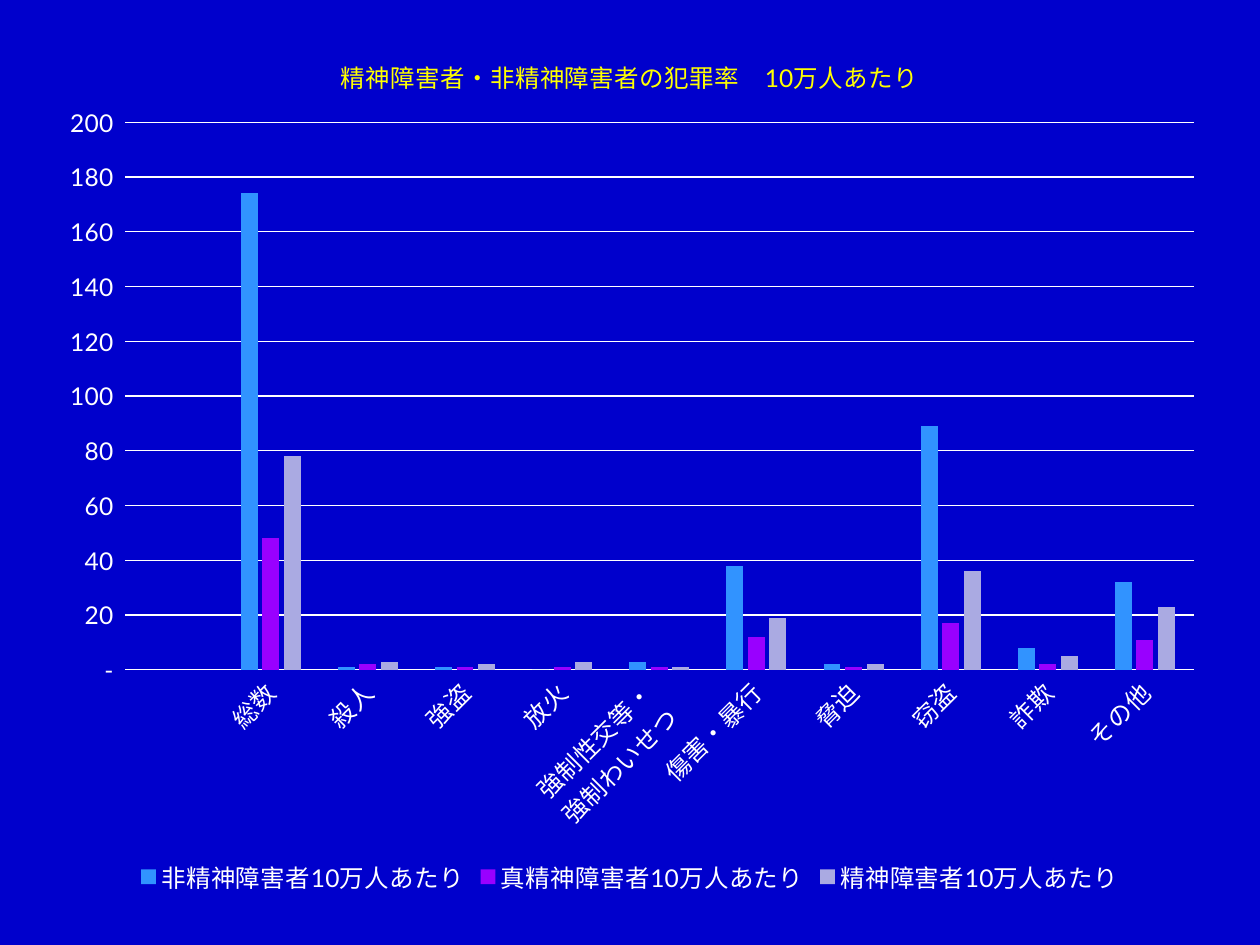
import pptx
import pptx.chart.data
import pptx.dml.color
import pptx.enum.chart
import pptx.oxml
import pptx.oxml.ns
import pptx.util

Inches, Pt = pptx.util.Inches, pptx.util.Pt
qn = pptx.oxml.ns.qn

# Content
TITLE = "精神障害者・非精神障害者の犯罪率　10万人あたり"
CRIMES = ["", "総数", "殺人", "強盗", "放火", "強制性交等・\n強制わいせつ",
          "傷害・暴行", "脅迫", "窃盗", "詐欺", "その他"]
RATES = [
    ("非精神障害者10万人あたり", "blue", [None, 174, 1, 1, 0, 3, 38, 2, 89, 8, 32]),
    ("真精神障害者10万人あたり", "purple", [None, 48, 2, 1, 1, 1, 12, 1, 17, 2, 11]),
    ("精神障害者10万人あたり", "lavender", [None, 78, 3, 2, 3, 1, 19, 2, 36, 5, 23]),
]
COLORS = {"background": "0000CC", "text": "FFFFFF", "title": "FFFF00",
          "blue": "3193FF", "purple": "9900FF", "lavender": "AAAAE2"}
FONT = "Lato"
NUMBER_FORMAT = r'_(* #,##0_);_(* \(#,##0\);_(* "-"_);_(@_)'


def rgb(name):
    return pptx.dml.color.RGBColor.from_string(COLORS[name])


def style_font(font, color="text"):
    font.name, font.size, font.bold = FONT, Pt(14), False
    font.color.rgb = rgb(color)


def style_line(line):
    line.color.rgb = rgb("text")
    line.width = Pt(0.75)


def set_layout(parent, index, inner=False, **fractions):
    """Place a chart part by fractions of the chart area."""
    for old in parent.findall(qn("c:layout")):
        parent.remove(old)
    target = '<c:layoutTarget val="inner"/>' if inner else ""
    modes = "".join(f'<c:{k}Mode val="edge"/>' for k in fractions if k in "xy")
    sizes = "".join(f'<c:{k} val="{v}"/>' for k, v in fractions.items())
    parent.insert(index, pptx.oxml.parse_xml(
        f'<c:layout {pptx.oxml.ns.nsdecls("c")}><c:manualLayout>'
        f"{target}{modes}{sizes}</c:manualLayout></c:layout>"))


# Slide
deck = pptx.Presentation()
deck.slide_width, deck.slide_height = Inches(10), Inches(7.5)
slide = deck.slides.add_slide(deck.slide_layouts[6])
slide.background.fill.solid()
slide.background.fill.fore_color.rgb = rgb("background")

# Chart
rates = pptx.chart.data.CategoryChartData(number_format="#,##0")
rates.categories = CRIMES
for name, _, values in RATES:
    rates.add_series(name, values)
chart = slide.shapes.add_chart(
    pptx.enum.chart.XL_CHART_TYPE.COLUMN_CLUSTERED,
    Inches(0.34), Inches(0.13), Inches(9.32), Inches(7.01), rates).chart
style_font(chart.font)
chart.font.size = Pt(10)

# Bars
bars = chart.plots[0]
bars.gap_width, bars.overlap, bars.vary_by_categories = 219, -27, False
for series, (_, color, _) in zip(bars.series, RATES):
    series.format.fill.solid()
    series.format.fill.fore_color.rgb = rgb(color)
    series.invert_if_negative = False

# Title
chart.has_title = True
heading = chart.chart_title.text_frame
heading.text = TITLE
style_font(heading.paragraphs[0].font, "title")
chart.chart_title.include_in_layout = False

# Axes
crime_axis, rate_axis = chart.category_axis, chart.value_axis
for axis in (crime_axis, rate_axis):
    axis.major_tick_mark = axis.minor_tick_mark = pptx.enum.chart.XL_TICK_MARK.NONE
    style_font(axis.tick_labels.font)
style_line(crime_axis.format.line)
crime_axis.tick_labels.font._element.getroottree()
for body in chart._chartSpace.xpath(".//c:catAx/c:txPr/a:bodyPr"):
    body.set("rot", "-2700000")
    body.set("vert", "horz")
rate_axis.minimum_scale, rate_axis.maximum_scale, rate_axis.major_unit = 0, 200, 20
rate_axis.format.line.fill.background()
style_line(rate_axis.major_gridlines.format.line)
rate_axis.tick_labels.number_format = NUMBER_FORMAT
rate_axis.tick_labels.number_format_is_linked = False

# Legend
chart.has_legend = True
chart.legend.position = pptx.enum.chart.XL_LEGEND_POSITION.BOTTOM
chart.legend.include_in_layout = False
style_font(chart.legend.font)

# Placement inside the chart
set_layout(chart._chartSpace.xpath("c:chart/c:title")[0], 1, x=0.25, y=0.04)
set_layout(chart._chartSpace.xpath("c:chart/c:plotArea")[0], 0, inner=True,
           x=0.07, y=0.12, w=0.91, h=0.62)

deck.save("out.pptx")
